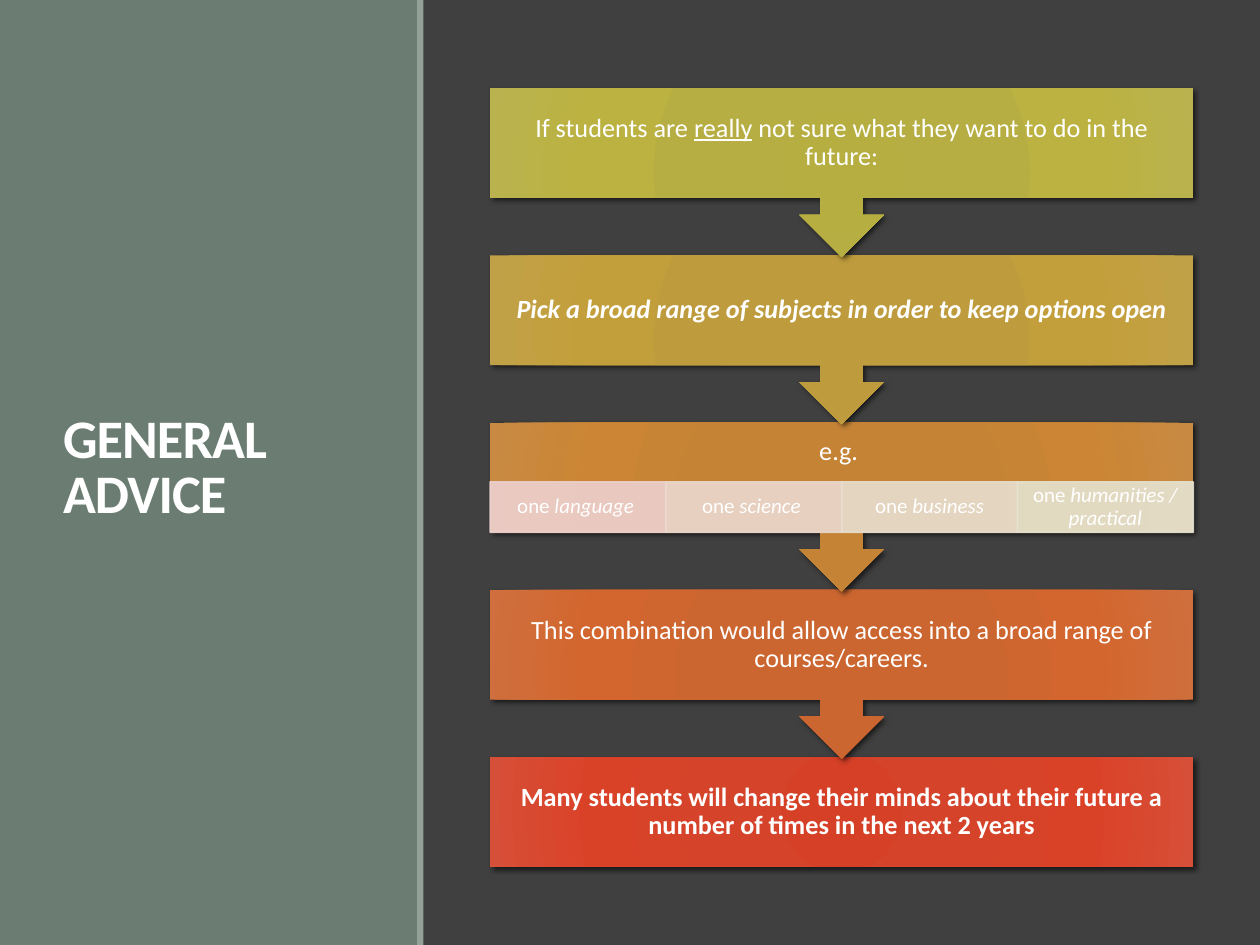
from dataclasses import dataclass

from lxml import etree
from pptx import Presentation
from pptx.dml.color import RGBColor
from pptx.enum.shapes import MSO_SHAPE
from pptx.enum.text import MSO_ANCHOR, PP_ALIGN
from pptx.oxml import parse_xml
from pptx.oxml.ns import nsdecls, qn
from pptx.util import Inches, Pt

RECT = MSO_SHAPE.RECTANGLE
CALLOUT = MSO_SHAPE.DOWN_ARROW_CALLOUT
MIDDLE = MSO_ANCHOR.MIDDLE
CENTER, LEFT = PP_ALIGN.CENTER, PP_ALIGN.LEFT


@dataclass(frozen=True)
class Theme:
    font: str = "Calibri"
    back: str = "404040"
    panel: str = "6B7D72"
    stripe: str = "93A299"
    text: str = "FFFFFF"
    title_size: int = 31
    step_size: int = 15
    cell_size: int = 12


class Deck:
    """Holds the theme and the current slide."""

    def __init__(self, theme):
        self.theme = theme
        self.prs = Presentation()
        self.prs.slide_width, self.prs.slide_height = Inches(10), Inches(7.5)
        self.slide = self.prs.slides.add_slide(self.prs.slide_layouts[5])
        fill = self.slide.background.fill
        fill.solid()
        fill.fore_color.rgb = RGBColor.from_string(theme.back)

    def style(self, run, size, marks=""):
        """Format a run; marks may hold b, i and u."""
        font = run.font
        font.name, font.size = self.theme.font, Pt(size)
        font.color.rgb = RGBColor.from_string(self.theme.text)
        font.bold, font.italic, font.underline = (m in marks for m in "biu")

    def title(self, text, x, y, w, h):
        shape = self.slide.shapes.title
        shape.left, shape.top = Inches(x), Inches(y)
        shape.width, shape.height = Inches(w), Inches(h)
        frame = shape.text_frame
        frame.text = text
        frame.word_wrap, frame.vertical_anchor = True, MIDDLE
        para = frame.paragraphs[0]
        para.alignment, para.line_spacing = LEFT, 0.85
        run = para.runs[0]
        self.style(run, self.theme.title_size, "b")
        run.font._element.set("spc", "-50")

    def box(self, kind, x, y, w, h, color=None):
        shape = self.slide.shapes.add_shape(
            kind, Inches(x), Inches(y), Inches(w), Inches(h))
        shape.shadow.inherit = False
        shape.line.fill.background()
        if color:
            shape.fill.solid()
            shape.fill.fore_color.rgb = RGBColor.from_string(color)
        return shape

    def band(self, x, w, color):
        """Full-height strip behind the title."""
        shape = self.box(RECT, x, 0, w, 7.5, color)
        self.slide.shapes.title.element.addprevious(shape.element)

    def label(self, shape, parts, size, pad_x, pad_y, low=0):
        """Centre (text, marks) parts; low keeps extra room at the bottom."""
        frame = shape.text_frame
        frame.word_wrap, frame.vertical_anchor = True, MIDDLE
        frame.margin_left = frame.margin_right = Inches(pad_x)
        frame.margin_top, frame.margin_bottom = Inches(pad_y), Inches(pad_y + low)
        para = frame.paragraphs[0]
        para.alignment, para.line_spacing = CENTER, 0.9
        for text, marks in parts:
            run = para.add_run()
            run.text = text
            self.style(run, size, marks)

    def step(self, kind, x, y, w, h, colors, parts, low=0):
        """Flow step with a radial gradient and a soft shadow."""
        shape = self.box(kind, x, y, w, h)
        shape.fill.background()
        props = shape.element.spPr
        stops = "".join(
            f'<a:gs pos="{pos}"><a:srgbClr val="{color}"/></a:gs>'
            for pos, color in zip((0, 34000, 70000, 100000), colors))
        props.replace(props.find(qn("a:noFill")), parse_xml(
            f'<a:gradFill {nsdecls("a")} rotWithShape="1">'
            f'<a:gsLst>{stops}</a:gsLst><a:path path="circle">'
            '<a:fillToRect l="100000" t="100000" r="100000" b="100000"/>'
            '</a:path></a:gradFill>'))
        props.find(qn("a:effectLst")).append(parse_xml(
            f'<a:outerShdw {nsdecls("a")} blurRad="{Pt(3)}" dist="{Pt(2)}" '
            'dir="2700000" algn="br" rotWithShape="0"><a:srgbClr val="000000">'
            '<a:alpha val="60000"/></a:srgbClr></a:outerShdw>'))
        self.label(shape, parts, self.theme.step_size, 0.12, 0.12, low)

    def cell(self, x, y, w, h, color, parts):
        """Slightly see-through example cell."""
        shape = self.box(RECT, x, y, w, h, color)
        shape.line.color.rgb = RGBColor.from_string(color)
        shape.line.width = Pt(1)
        for tone in shape.element.spPr.iter(qn("a:srgbClr")):
            etree.SubElement(tone, qn("a:alpha")).set("val", "90000")
        self.label(shape, parts, self.theme.cell_size, 0.09, 0.02)


# Steps from top to bottom: gradient colours, text parts
STEPS = [
    (("B6AE40", "B6AE43", "BBB241", "BAB24E"),
     [("If students are ", ""), ("really", "u"),
      (" not sure what they want to do in the future:", "")]),
    (("BE9B39", "BE9B3C", "C39F3B", "C1A148"),
     [("Pick a broad range of subjects in order to keep options open", "bi")]),
    (("C68233", "C58336", "CB8534", "C88A43"), [("e.g. ", "")]),
    (("CD642D", "CC6630", "D3662E", "CF6F3D"),
     [("This combination would allow access into a broad range of "
       "courses/careers.", "")]),
    (("D54027", "D4432A", "DA4228", "D64F38"),
     [("Many students will change their minds about their future a number "
       "of times in the next 2 years", "b")]),
]
CELLS = [("EDD1CF", "language "), ("EBD9CF", "science "),
         ("E8DFD0", "business"), ("E5E3D1", "humanities / practical")]
EXAMPLE = 2  # step that carries the cells


def main():
    theme = Theme()
    deck = Deck(theme)

    # Side panel and title
    deck.band(0, 3.32, theme.panel)
    deck.band(3.31, 0.05, theme.stripe)
    deck.title("GENERAL ADVICE", 0.4, 0.57, 2.53, 6.31)

    # Flow, drawn from the bottom so each arrow tip lies on top
    left, top, width, body, full = 3.89, 0.7, 5.58, 0.87, 1.34
    last = len(STEPS) - 1
    pitch = (6.01 - top) / last
    cell_h, cell_w = 0.4, width / len(CELLS)
    for i, (colors, parts) in reversed(list(enumerate(STEPS))):
        y = top + i * pitch
        kind, height = (RECT, body) if i == last else (CALLOUT, full)
        low = cell_h if i == EXAMPLE else 0
        deck.step(kind, left, y, width, height, colors, parts, low)

        # Example cells along the foot of their step
        if i == EXAMPLE:
            for j, (color, word) in enumerate(CELLS):
                deck.cell(left + j * cell_w, y + body - cell_h, cell_w, cell_h,
                          color, [("one ", ""), (word, "i")])

    deck.prs.save("out.pptx")


if __name__ == "__main__":
    main()
